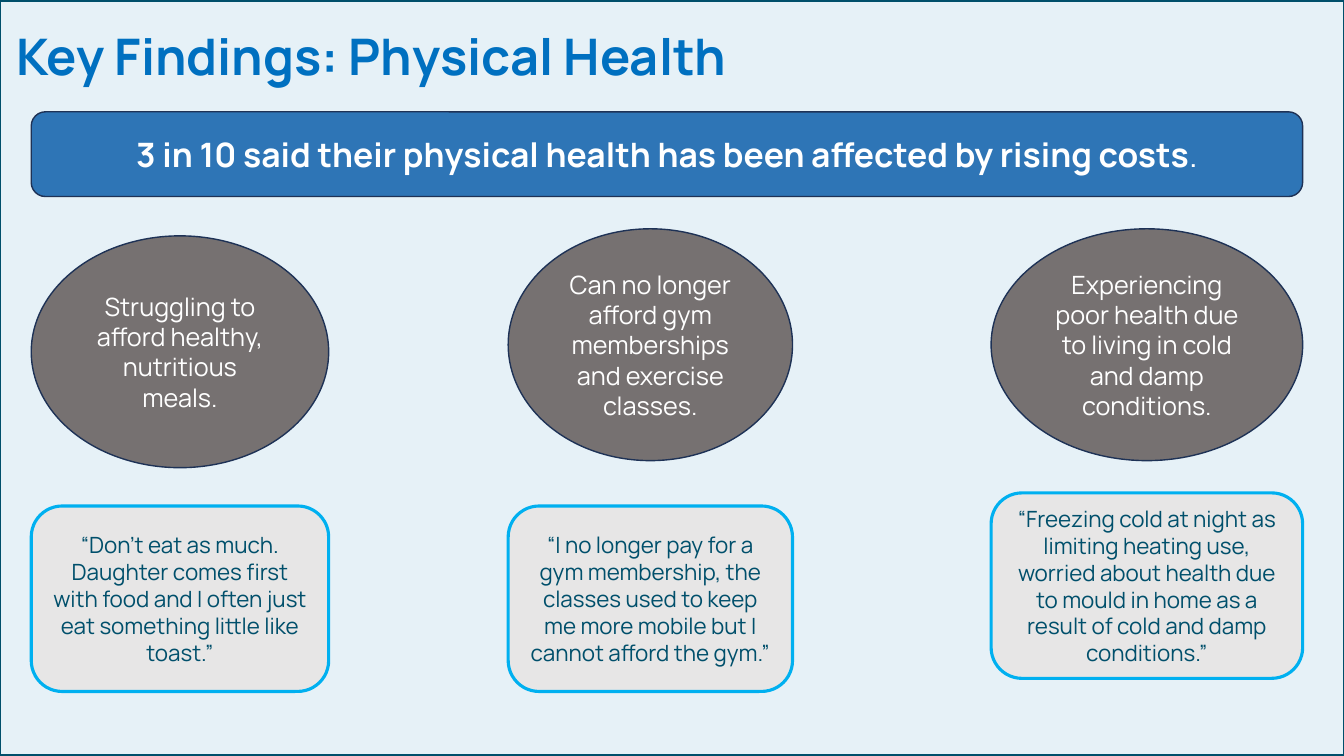
from pptx import Presentation
from pptx.dml.color import RGBColor
from pptx.enum.shapes import MSO_SHAPE
from pptx.enum.text import MSO_ANCHOR, PP_ALIGN
from pptx.util import Inches, Pt

FONT = "Manrope"
PALE = RGBColor(0xE6, 0xF1, 0xF7)
TEAL = RGBColor(0x00, 0x4F, 0x6B)
TITLE_BLUE = RGBColor(0x00, 0x70, 0xC0)
BANNER_BLUE = RGBColor(0x2E, 0x75, 0xB6)
NAVY = RGBColor(0x1E, 0x32, 0x56)
GREY = RGBColor(0x76, 0x71, 0x71)
LIGHT_GREY = RGBColor(0xE7, 0xE6, 0xE6)
CYAN = RGBColor(0x00, 0xB0, 0xF0)
WHITE = RGBColor(0xFF, 0xFF, 0xFF)

FINDINGS = [
    (0.31, 2.95, 2.34, 5.02,
     "Struggling to afford healthy, nutritious meals.",
     "“Don’t eat as much. Daughter comes first with food and I often just "
     "eat something little like toast.”"),
    (5.04, 2.82, 2.27, 5.02,
     "Can no longer afford gym memberships and exercise classes.",
     "“I no longer pay for a gym membership, the classes used to keep me "
     "more mobile but I cannot afford the gym.”"),
    (9.83, 3.09, 2.27, 4.89,
     "Experiencing poor health due to living in cold and damp conditions.",
     "“Freezing cold at night as limiting heating use, worried about health "
     "due to mould in home as a result of cold and damp conditions.”"),
]


def add_run(p, text, size, color, bold=False):
    r = p.add_run()
    r.text = text
    r.font.name = FONT
    r.font.size = Pt(size)
    r.font.bold = bold
    r.font.color.rgb = color


def add_panel(s, kind, box, line, width, fill=None):
    sp = s.shapes.add_shape(kind, *map(Inches, box))
    sp.shadow.inherit = False
    if fill is None:
        sp.fill.background()
    else:
        sp.fill.solid()
        sp.fill.fore_color.rgb = fill
    sp.line.color.rgb = line
    sp.line.width = Pt(width)
    tf = sp.text_frame
    tf.word_wrap = True
    tf.vertical_anchor = MSO_ANCHOR.MIDDLE
    p = tf.paragraphs[0]
    p.alignment = PP_ALIGN.CENTER
    return p


def add_title(s, box):
    tf = s.shapes.add_textbox(*map(Inches, box)).text_frame
    tf.word_wrap = True
    tf.margin_left = tf.margin_right = Inches(0.16)
    tf.margin_top = tf.margin_bottom = Inches(0.12)
    add_run(tf.paragraphs[0], "Key Findings: Physical Health", 36, TITLE_BLUE, bold=True)


def add_banner(s, box):
    p = add_panel(s, MSO_SHAPE.ROUNDED_RECTANGLE, box, NAVY, 1, BANNER_BLUE)
    add_run(p, "3 in 10 said their physical health has been affected by rising costs",
            24, WHITE, bold=True)
    add_run(p, ".", 24, WHITE)


def add_finding(s, left, width, oval_top, quote_top, finding, quote):
    p = add_panel(s, MSO_SHAPE.OVAL, (left, oval_top, width, 2.3), NAVY, 1, GREY)
    add_run(p, finding, 18, WHITE)
    p = add_panel(s, MSO_SHAPE.ROUNDED_RECTANGLE, (left, quote_top, width, 1.84),
                  CYAN, 2.25, LIGHT_GREY)
    add_run(p, quote, 16, TEAL)


def main():
    prs = Presentation()
    prs.slide_width = Inches(13.33)
    prs.slide_height = Inches(7.5)
    s = prs.slides.add_slide(prs.slide_layouts[6])
    s.background.fill.solid()
    s.background.fill.fore_color.rgb = PALE
    add_panel(s, MSO_SHAPE.RECTANGLE, (-0.01, 0, 13.35, 7.5), TEAL, 3)
    add_title(s, (0, 0.13, 9.69, 0.84))
    add_banner(s, (0.31, 1.11, 12.61, 0.84))
    for finding in FINDINGS:
        add_finding(s, *finding)
    prs.save("out.pptx")


if __name__ == "__main__":
    main()
